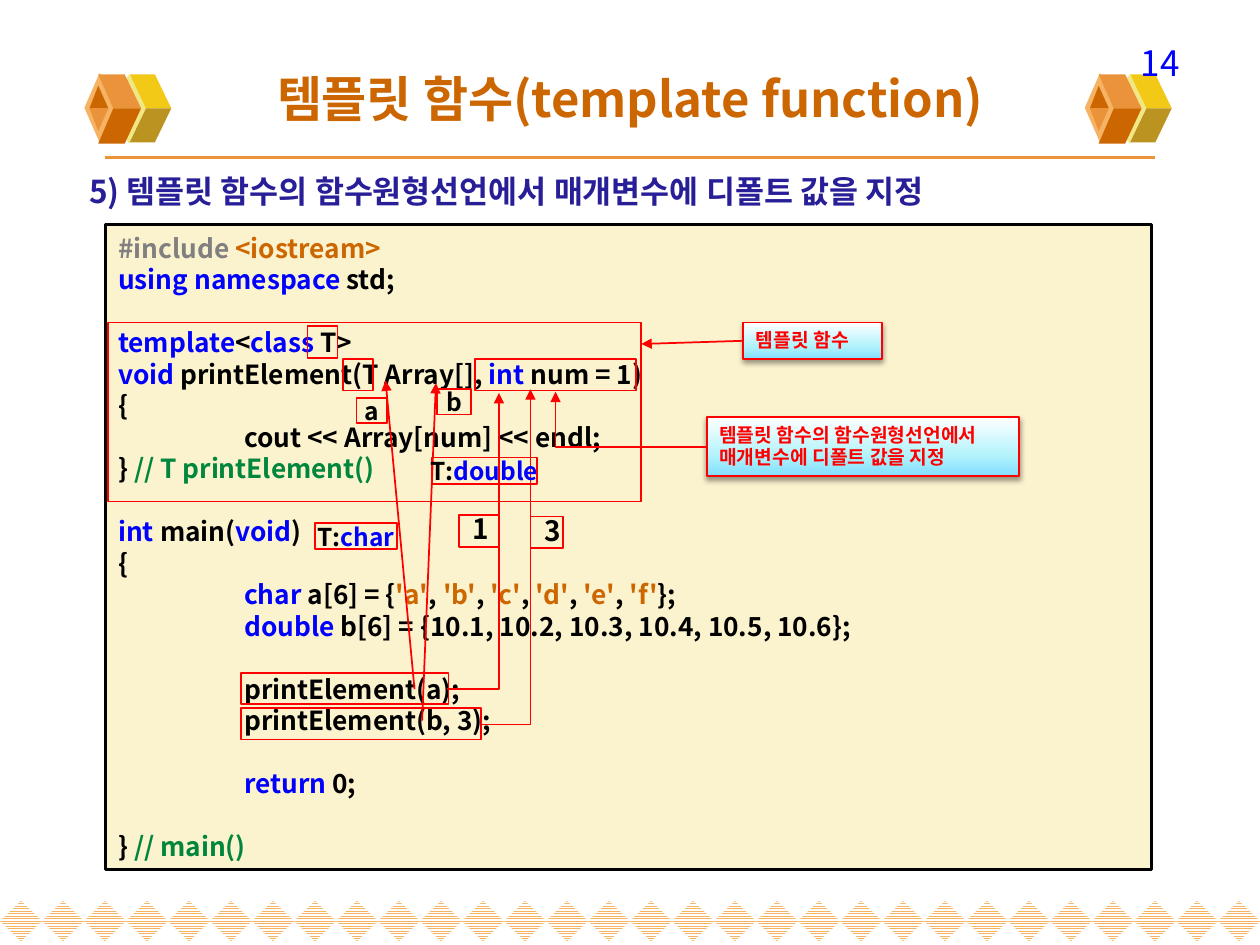
from lxml.etree import SubElement
from pptx import Presentation
from pptx.dml.color import RGBColor
from pptx.enum.dml import MSO_PATTERN
from pptx.enum.shapes import MSO_CONNECTOR as LINK, MSO_SHAPE as SHAPE
from pptx.enum.text import MSO_ANCHOR as ANCHOR, PP_ALIGN as ALIGN
from pptx.oxml import parse_xml
from pptx.oxml.ns import nsdecls, qn
from pptx.util import Inches, Pt

FONT = "Noto Sans CJK KR"
COLORS = {
    "text": "000000", "keyword": "0000FF", "literal": "CC6600", "comment": "00863D",
    "directive": "808080", "heading": "271E98", "mark": "FF0000", "code": "FBF2CE",
    "rule": "EB933B", "pattern": "F5B363", "white": "FFFFFF", "edge": "F1E785",
    "yellow": "F3C917", "olive": "BB9321", "front": "F5B363", "orange": "EB933B",
    "brown": "CC6600",
}

# Code lines: (blank lines before, indented, [(colour, text), ...])
LETTERS = [("text", " a[6] = {")]
for letter in "abcdef":
    LETTERS += [("literal", f"'{letter}'"), ("text", "};" if letter == "f" else ", ")]
CODE = [
    (0, 0, [("directive", "#include "), ("literal", "<iostream>")]),
    (0, 0, [("keyword", "using namespace"), ("text", " std;")]),
    (1, 0, [("keyword", "template"), ("text", "<"), ("keyword", "class"), ("text", " T>")]),
    (0, 0, [("keyword", "void "), ("text", "printElement(T Array[], "),
            ("keyword", "int "), ("text", "num = 1)")]),
    (0, 0, [("text", "{")]),
    (0, 1, [("text", "cout << Array[num] << endl;")]),
    (0, 0, [("text", "} "), ("comment", "// T printElement()")]),
    (1, 0, [("keyword", "int"), ("text", " main("), ("keyword", "void"), ("text", ")")]),
    (0, 0, [("text", "{")]),
    (0, 1, [("keyword", "char")] + LETTERS),
    (0, 1, [("keyword", "double"),
            ("text", " b[6] = {10.1, 10.2, 10.3, 10.4, 10.5, 10.6};")]),
    (1, 1, [("text", "printElement(a);")]),
    (0, 1, [("text", "printElement(b, 3);")]),
    (1, 1, [("keyword", "return"), ("text", " 0;")]),
    (1, 0, [("text", "} "), ("comment", "// main()")]),
]

# Faces of the left cube, back to front; None stands for a diamond
CUBE = [
    ("edge", None, (0.86, 0.59, 0.33, 0.55)),
    ("yellow", [(1.16, 0.86), (1.36, 0.86), (1.23, 0.59), (1.03, 0.59)], None),
    ("olive", [(1.16, 0.86), (1.36, 0.86), (1.23, 1.13), (1.03, 1.13)], None),
    ("front", None, (0.67, 0.58, 0.24, 0.55)),
    ("orange", [(0.9, 0.86), (1.12, 0.86), (0.99, 0.59), (0.78, 0.59)], None),
    ("brown", [(0.9, 0.86), (1.12, 0.86), (0.99, 1.14), (0.78, 1.14)], None),
    ("brown", [(0.78, 0.68), (0.71, 0.86), (0.86, 0.86)], None),
    ("orange", [(0.78, 1.04), (0.71, 0.86), (0.86, 0.86)], None),
]


def rgb(name):
    return RGBColor.from_string(COLORS[name])


def paint(shape, fill=None, line=None, width=1):
    shape.shadow.inherit = False
    if fill:
        shape.fill.solid()
        shape.fill.fore_color.rgb = rgb(fill)
    else:
        shape.fill.background()
    if line:
        shape.line.color.rgb = rgb(line)
        shape.line.width = Pt(width)
    else:
        shape.line.fill.background()


def add_box(slide, at, fill=None, line="mark", width=1, kind=SHAPE.RECTANGLE):
    box = slide.shapes.add_shape(kind, *map(Inches, at))
    paint(box, fill, line, width)
    return box


def write(shape, lines, size, align=ALIGN.LEFT, anchor=ANCHOR.TOP, bold=True,
          inset=(0.1, 0.05), wrap=True, pitch=1.2):
    """Fill a shape with lines, each a list of (colour, text) parts."""
    frame = shape.text_frame
    frame.word_wrap, frame.vertical_anchor = wrap, anchor
    frame.margin_left = frame.margin_right = Inches(inset[0])
    frame.margin_top = frame.margin_bottom = Inches(inset[1])
    for index, parts in enumerate(lines):
        paragraph = frame.add_paragraph() if index else frame.paragraphs[0]
        paragraph.alignment = align
        paragraph.line_spacing = Pt(round(size * pitch))
        for color, text in parts:
            run = paragraph.add_run()
            run.text = text
            run.font.size, run.font.bold, run.font.name = Pt(size), bold, FONT
            run.font.color.rgb = rgb(color)
            SubElement(run.font._element, qn("a:ea")).set("typeface", FONT)
    return frame


def add_text(slide, at, color, text, size, **options):
    box = slide.shapes.add_textbox(*map(Inches, at))
    write(box, [[(color, text)]], size, **options)


def add_label(slide, at, parts):
    write(add_box(slide, at), [parts], 14, ALIGN.CENTER, ANCHOR.MIDDLE,
          inset=(0, 0), wrap=False)


def add_link(slide, start, end, color="mark", width=1, bent=False, arrow=True):
    link = slide.shapes.add_connector(LINK.ELBOW if bent else LINK.STRAIGHT,
                                      *map(Inches, start + end))
    link.line.color.rgb = rgb(color)
    link.line.width = Pt(width)
    properties = link._element.spPr
    if bent:  # a single corner: sideways, then up
        properties.find(qn("a:prstGeom")).set("prst", "bentConnector2")
    if arrow:
        SubElement(link.line._get_or_add_ln(), qn("a:tailEnd")).set("type", "triangle")
    SubElement(properties, qn("a:effectLst"))
    return link


def add_callout(slide, at, lines):
    callout = add_box(slide, at)
    properties = callout._element.spPr
    stops = "".join(f'<a:gs pos="{pos}000"><a:srgbClr val="{color}"/></a:gs>'
                    for pos, color in [(0, "81DEFF"), (35, "B2F3FC"), (100, "FFFFFF")])
    gradient = parse_xml(f'<a:gradFill {nsdecls("a")} rotWithShape="1"><a:gsLst>{stops}'
                         '</a:gsLst><a:lin ang="16200000" scaled="1"/></a:gradFill>')
    properties.replace(properties.find(qn("a:noFill")), gradient)
    shadow = parse_xml(
        f'<a:outerShdw {nsdecls("a")} blurRad="{Pt(3.1)}" dist="{Pt(1.6)}" dir="5400000" '
        'rotWithShape="0"><a:srgbClr val="000000"><a:alpha val="38000"/></a:srgbClr>'
        '</a:outerShdw>')
    properties.find(qn("a:effectLst")).append(shadow)
    write(callout, [[("mark", line)] for line in lines], 11, ALIGN.JUSTIFY)
    return callout


def add_cube(slide, shift):
    for color, points, at in CUBE:
        if at:
            add_box(slide, (at[0] + shift, *at[1:]), color, None, kind=SHAPE.DIAMOND)
            continue
        corners = [(Inches(x + shift), Inches(y)) for x, y in points]
        face = slide.shapes.build_freeform(*corners[0])
        face.add_line_segments(corners[1:])
        paint(face.convert_to_shape(), color)


def add_decoration(slide):
    for column in range(30):
        diamond = add_box(slide, (column / 3, 7.15, 1 / 3, 0.32), line=None,
                          kind=SHAPE.DIAMOND)
        diamond.fill.patterned()
        diamond.fill.pattern = MSO_PATTERN.NARROW_HORIZONTAL
        diamond.fill.fore_color.rgb = rgb("pattern")
        diamond.fill.back_color.rgb = rgb("white")
    add_link(slide, (0.83, 1.25), (9.17, 1.25), "rule", 2.25, arrow=False)
    for shift in (0, 7.94):
        add_cube(slide, shift)


def add_code(slide):
    listing = add_box(slide, (0.84, 1.78, 8.3, 5.12), "code", "text", 1.5)
    frame = write(listing, [parts for _, _, parts in CODE], 15, anchor=ANCHOR.MIDDLE)
    for paragraph, (gap, indented, _) in zip(frame.paragraphs, CODE):
        paragraph.space_before = Pt(18 * gap)
        if indented:
            paragraph._p.get_or_add_pPr().set("marL", str(Inches(1)))


def main():
    deck = Presentation()
    deck.slide_width, deck.slide_height = Inches(10), Inches(7.5)
    slide = deck.slides.add_slide(deck.slide_layouts[6])
    add_decoration(slide)

    # Page number, title and heading
    add_text(slide, (7.13, 0.28, 2.33, 0.3), "keyword", "14", 20,
             align=ALIGN.RIGHT, bold=False)
    add_text(slide, (0.5, 0.3, 9, 0.95), "literal", "템플릿 함수(template function)", 28,
             align=ALIGN.CENTER, anchor=ANCHOR.MIDDLE)
    add_text(slide, (0.61, 1.38, 9, 0.36), "heading",
             "5) 템플릿 함수의 함수원형선언에서 매개변수에 디폴트 값을 지정", 18, pitch=0.96)
    add_code(slide)

    # Values passed for num
    for box, text_at, value in [((4.21, 4.1, 0.26, 0.25), (4.32, 4.08, 0.16, 0.27), "3"),
                                ((3.64, 4.09, 0.32, 0.25), (3.75, 4.06, 0.24, 0.27), "1")]:
        add_box(slide, box)
        add_text(slide, text_at, "text", value, 16, inset=(0, 0))

    # Callouts
    function_note = add_callout(slide, (5.9, 2.56, 1.1, 0.29), ["템플릿 함수"])
    add_link(slide, (5.9, 2.7), (5.09, 2.73)).begin_connect(function_note, 1)
    add_callout(slide, (5.61, 3.31, 2.48, 0.47),
                ["템플릿 함수의 함수원형선언에서", "매개변수에 디폴트 값을 지정"])

    # Frames: function, T, parameter type, default parameter, two calls
    for frame in [(0.86, 2.56, 4.23, 1.42), (2.44, 2.59, 0.24, 0.25),
                  (2.72, 2.85, 0.24, 0.25), (3.77, 2.85, 1.28, 0.25),
                  (1.91, 5.34, 1.65, 0.25), (1.91, 5.62, 1.91, 0.25)]:
        add_box(slide, frame)

    # Arrows to num, then to T and Array
    for start, end in [((5.61, 3.55), (4.41, 3.11)), ((3.55, 5.47), (3.96, 3.12)),
                       ((3.82, 5.75), (4.21, 3.09))]:
        add_link(slide, start, end, bent=True)
    add_link(slide, (3.29, 5.47), (3.06, 3.02))
    add_link(slide, (3.35, 5.72), (3.46, 3.04))

    # Argument and type labels
    add_label(slide, (2.83, 3.16, 0.24, 0.2), [("text", "a")])
    add_label(slide, (3.47, 3.09, 0.27, 0.2), [("text", "b")])
    add_label(slide, (2.5, 4.15, 0.65, 0.21), [("text", "T:"), ("keyword", "char")])
    add_label(slide, (3.43, 3.63, 0.83, 0.21), [("text", "T:"), ("keyword", "double")])

    deck.save("out.pptx")


if __name__ == "__main__":
    main()
